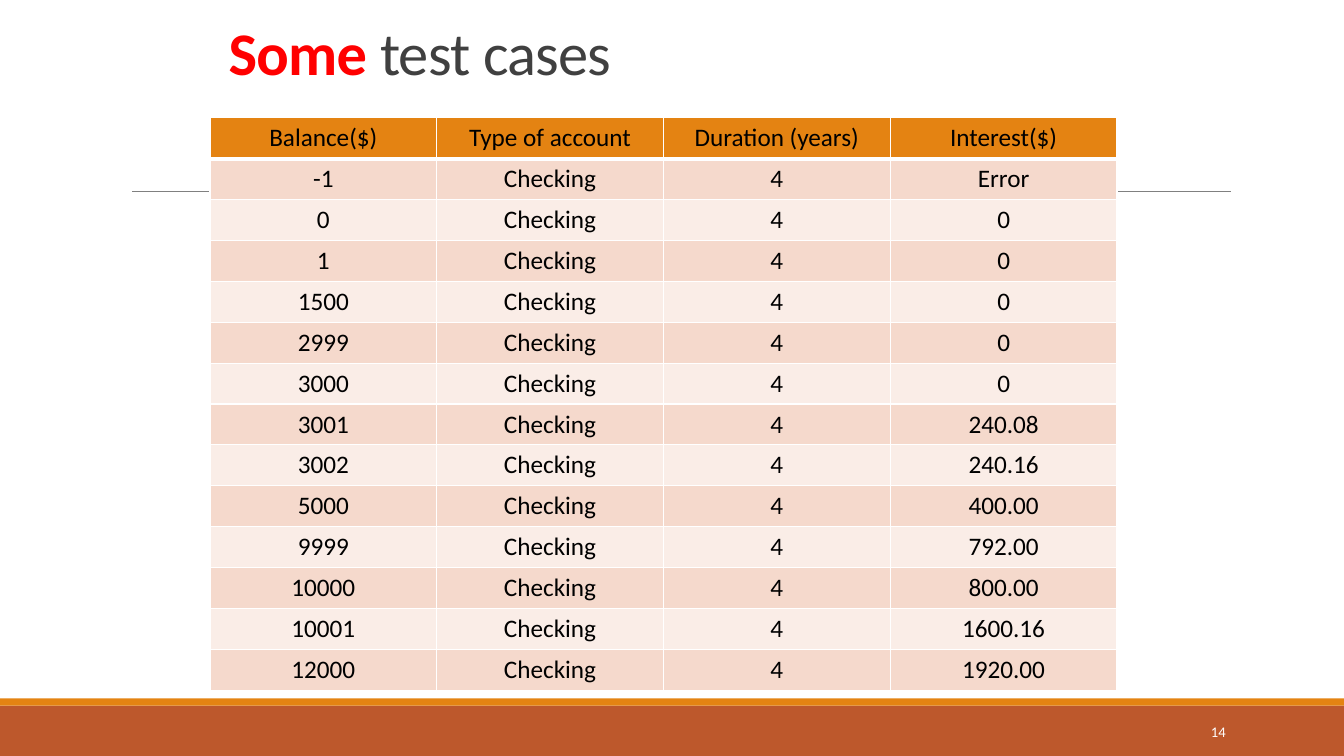
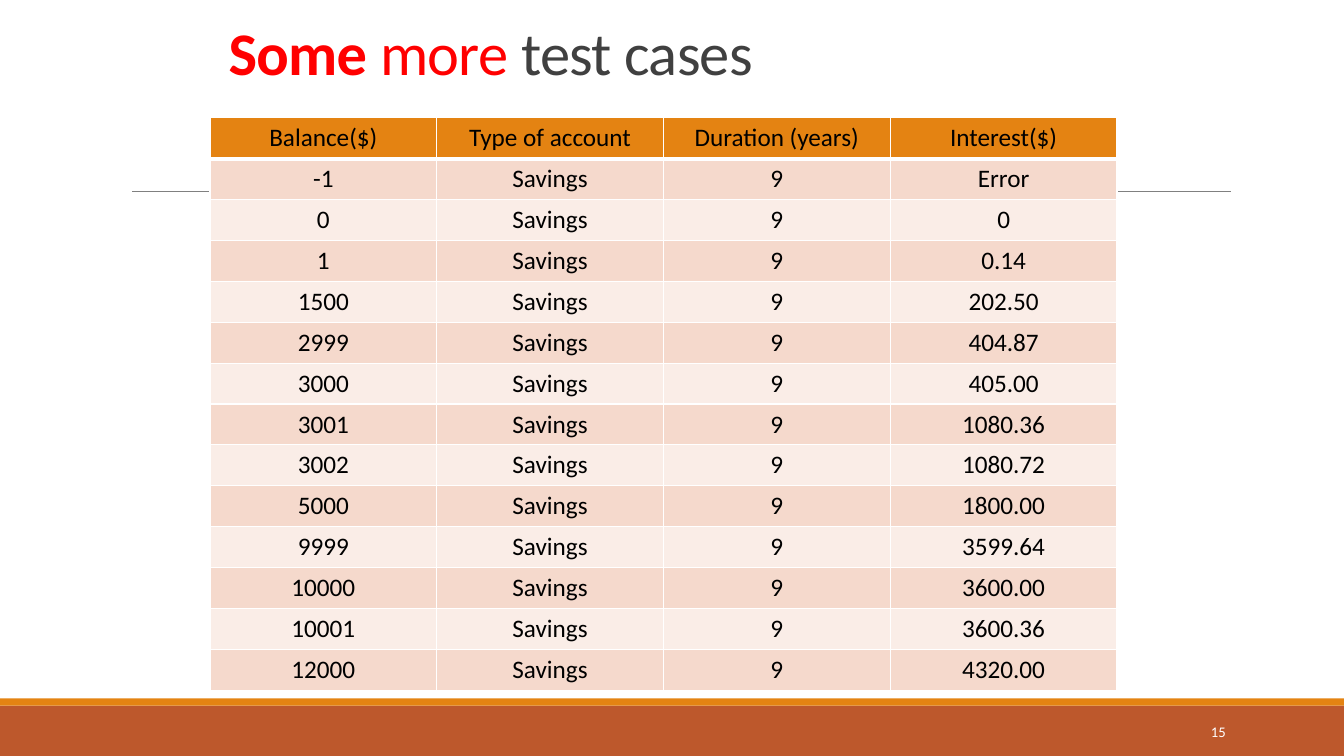
"""Build two slides of interest test cases, one per account type."""
from lxml import etree
from pptx import Presentation, util as u
from pptx.dml.color import RGBColor
from pptx.enum import shapes, text
from pptx.oxml.ns import qn

FONT = "Calibri"
WHITE, BLACK, RED, DARK, GREY = "FFFFFF", "000000", "FF0000", "404040", "808080"
ORANGE, RUST = "E48312", "BD582C"
ROW_FILLS = ["F5D9CC", "FAEDE7"]

HEADERS = ["Balance($)", "Type of account", "Duration (years)", "Interest($)"]
BALANCES = ["-1", "0", "1", "1500", "2999", "3000", "3001", "3002",
            "5000", "9999", "10000", "10001", "12000"]
CASES = [
    {
        "number": "14",
        "title": [("Some", RED, True), (" test cases", DARK, False)],
        "account": "Checking",
        "years": "4",
        "interest": ["Error", "0", "0", "0", "0", "0", "240.08", "240.16",
                     "400.00", "792.00", "800.00", "1600.16", "1920.00"],
    },
    {
        "number": "15",
        "title": [("Some ", RED, True), ("more", RED, False), (" test cases", DARK, False)],
        "account": "Savings",
        "years": "9",
        "interest": ["Error", "0", "0.14", "202.50", "404.87", "405.00", "1080.36",
                     "1080.72", "1800.00", "3599.64", "3600.00", "3600.36", "4320.00"],
    },
]


def rgb(value):
    return RGBColor.from_string(value)


def add_span(para, words, size, color, bold=False):
    span = para.add_run()
    span.text = words
    span.font.name = FONT
    span.font.size = u.Pt(size)
    span.font.bold = bold
    span.font.color.rgb = rgb(color)
    return span


deck = Presentation()
deck.slide_width, deck.slide_height = u.Cm(33.87), u.Cm(19.05)
blank = deck.slide_layouts[6]

for case in CASES:
    page = deck.slides.add_slide(blank)

    for top, height, color in [(17.78, 1.27, RUST), (17.6, 0.18, ORANGE)]:
        band = page.shapes.add_shape(shapes.MSO_SHAPE.RECTANGLE, 0, u.Cm(top),
                                     deck.slide_width, u.Cm(height))
        band.shadow.inherit = False
        band.fill.solid()
        band.fill.fore_color.rgb = rgb(color)
        band.line.fill.background()

    rule = page.shapes.add_connector(shapes.MSO_CONNECTOR.STRAIGHT,
                                     u.Cm(3.33), u.Cm(4.83), u.Cm(31.01), u.Cm(4.83))
    rule.line.color.rgb = rgb(GREY)
    rule.line.width = u.Pt(0.5)
    etree.SubElement(rule.element.spPr, qn("a:effectLst"))

    title_box = page.shapes.add_textbox(u.Cm(5.51), u.Cm(0.76), u.Cm(22.86), u.Cm(1.57))
    title_box.text_frame.word_wrap = True
    title_box.text_frame.vertical_anchor = text.MSO_ANCHOR.BOTTOM
    para = title_box.text_frame.paragraphs[0]
    para.line_spacing = 0.85
    for words, color, bold in case["title"]:
        span = add_span(para, words, 43.2, color, bold)
        span.font._element.set("spc", "-50")

    rows = [HEADERS] + [[balance, case["account"], case["years"], interest]
                        for balance, interest in zip(BALANCES, case["interest"])]
    table = page.shapes.add_table(len(rows), len(HEADERS), u.Cm(5.29), u.Cm(2.97),
                                  u.Cm(22.86), u.Cm(1.03 * len(rows))).table
    for row_index, row in enumerate(rows):
        is_header = row_index == 0
        fill = ORANGE if is_header else ROW_FILLS[(row_index - 1) % 2]
        for column_index, words in enumerate(row):
            cell = table.cell(row_index, column_index)
            properties = cell._tc.get_or_add_tcPr()
            for side in ["lnL", "lnR", "lnT", "lnB"]:
                width = 3 if is_header and side == "lnB" else 1
                border = etree.SubElement(properties, qn("a:" + side), w=str(u.Pt(width)))
                paint = etree.SubElement(border, qn("a:solidFill"))
                etree.SubElement(paint, qn("a:srgbClr"), val=WHITE)
            cell.fill.solid()
            cell.fill.fore_color.rgb = rgb(fill)
            para = cell.text_frame.paragraphs[0]
            para.alignment = text.PP_ALIGN.CENTER
            add_span(para, words, 18, BLACK)

    number_box = page.shapes.add_textbox(u.Cm(27.51), u.Cm(17.93), u.Cm(3.63), u.Cm(1.02))
    number_box.text_frame.word_wrap = True
    number_box.text_frame.vertical_anchor = text.MSO_ANCHOR.MIDDLE
    para = number_box.text_frame.paragraphs[0]
    para.alignment = text.PP_ALIGN.RIGHT
    add_span(para, case["number"], 10.5, WHITE)

deck.save("out.pptx")
